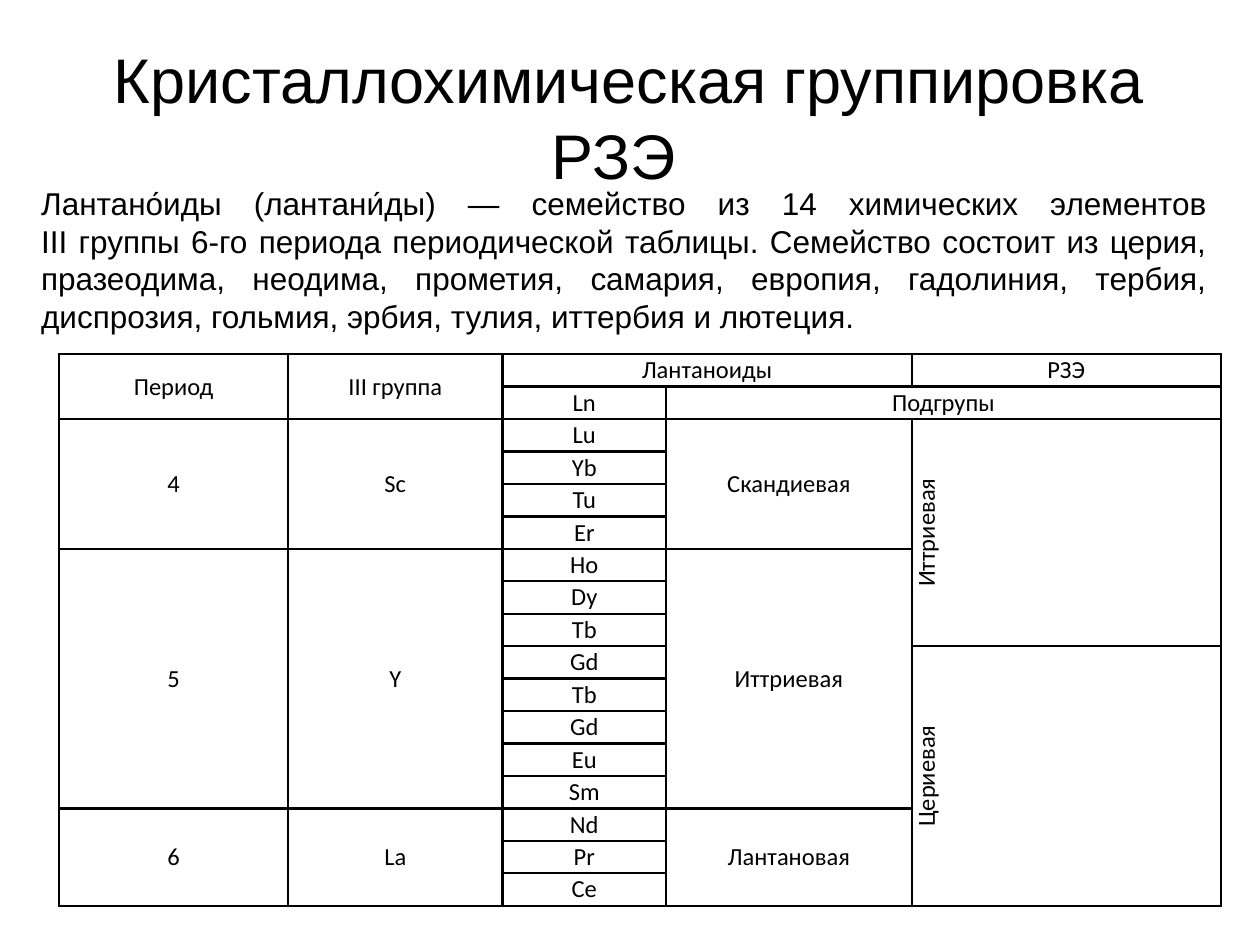
from lxml.etree import SubElement
from pptx import Presentation
from pptx.dml.color import RGBColor
from pptx.enum.text import MSO_ANCHOR, MSO_AUTO_SIZE, PP_ALIGN
from pptx.oxml.ns import qn
from pptx.util import Cm, Pt

BLACK = RGBColor(0, 0, 0)
TITLE_LINES = ["Кристаллохимическая группировка", " РЗЭ\t"]
DEFINITION_LINES = [
    "Лантано́иды (лантани́ды) — семейство из 14 химических элементов",
    "III группы 6-го периода периодической таблицы. Семейство состоит из "
    "церия, празеодима, неодима, прометия, самария, европия, гадолиния, "
    "тербия, диспрозия, гольмия, эрбия, тулия, иттербия и лютеция. ",
]
COLUMN_WIDTHS = [4.62, 4.32, 3.3, 4.95, 6.23]
LANTHANIDES = "Lu Yb Tu Er Ho Dy Tb Gd Tb Gd Eu Sm Nd Pr Ce".split()
HEADINGS = [
    (0, 0, 2, 1, "Период"),
    (0, 1, 2, 1, "III группа"),
    (0, 2, 1, 2, "Лантаноиды"),
    (0, 4, 1, 1, "РЗЭ"),
    (1, 2, 1, 1, "Ln"),
    (1, 3, 1, 2, "Подгрупы"),
]
PERIODS = [
    (4, "4", "Sc", "Скандиевая"),
    (8, "5", "Y", "Иттриевая"),
    (3, "6", "La", "Лантановая"),
]
RARE_EARTH_GROUPS = [(7, "Иттриевая"), (8, "Цериевая")]
FIRST_ELEMENT_ROW = 2


def add_run(paragraph, text, font_name, size):
    run = paragraph.add_run()
    run.text = text
    run.font.name = font_name
    run.font.size = Pt(size)
    run.font.color.rgb = BLACK


def write_lines(paragraph, lines, size, alignment):
    paragraph.alignment = alignment
    for number, line in enumerate(lines):
        if number:
            paragraph.add_line_break()
        add_run(paragraph, line, "Arial", size)


def place_title(slide, left, top, width, height):
    title = slide.shapes.title
    title.left, title.top, title.width, title.height = left, top, width, height
    frame = title.text_frame
    frame.vertical_anchor = MSO_ANCHOR.MIDDLE
    write_lines(frame.paragraphs[0], TITLE_LINES, 36, PP_ALIGN.CENTER)


def place_definition(slide, left, top, width, height):
    frame = slide.shapes.add_textbox(left, top, width, height).text_frame
    frame.word_wrap = True
    frame.auto_size = MSO_AUTO_SIZE.SHAPE_TO_FIT_TEXT
    write_lines(frame.paragraphs[0], DEFINITION_LINES, 18, PP_ALIGN.JUSTIFY)


def format_cell(cell):
    cell.margin_left = cell.margin_right = cell.margin_top = cell.margin_bottom = 0
    cell.vertical_anchor = MSO_ANCHOR.MIDDLE
    properties = cell._tc.get_or_add_tcPr()
    for side in ("a:lnL", "a:lnR", "a:lnT", "a:lnB"):
        border = SubElement(properties, qn(side), w=str(Pt(1.5)))
        fill = SubElement(border, qn("a:solidFill"))
        SubElement(fill, qn("a:srgbClr"), val=str(BLACK))
    cell.fill.background()


def group_entries():
    entries = list(HEADINGS)
    for row, symbol in enumerate(LANTHANIDES, FIRST_ELEMENT_ROW):
        entries.append((row, 2, 1, 1, symbol))
    row = FIRST_ELEMENT_ROW
    for span, period, element, subgroup in PERIODS:
        for column, text in ((0, period), (1, element), (3, subgroup)):
            entries.append((row, column, span, 1, text))
        row += span
    row = FIRST_ELEMENT_ROW
    for span, group in RARE_EARTH_GROUPS:
        entries.append((row, 4, span, 1, group))
        row += span
    return entries


def place_grouping(slide, left, top, width, height):
    row_count = FIRST_ELEMENT_ROW + len(LANTHANIDES)
    grouping = slide.shapes.add_table(
        row_count, len(COLUMN_WIDTHS), left, top, width, height
    ).table
    grouping.first_row = grouping.horz_banding = False
    for column, share in zip(grouping.columns, COLUMN_WIDTHS):
        column.width = int(width * share / sum(COLUMN_WIDTHS))
    for row in grouping.rows:
        row.height = height // row_count
    for cell in grouping.iter_cells():
        format_cell(cell)
    for row, column, row_span, column_span, text in group_entries():
        cell = grouping.cell(row, column)
        if row_span * column_span > 1:
            cell.merge(grouping.cell(row + row_span - 1, column + column_span - 1))
        if column == 4 and row >= FIRST_ELEMENT_ROW:
            cell._tc.get_or_add_tcPr().set("vert", "vert270")
        paragraph = cell.text_frame.paragraphs[0]
        paragraph.alignment = PP_ALIGN.CENTER
        add_run(paragraph, text, "Calibri", 14)


def main():
    presentation = Presentation()
    presentation.slide_width, presentation.slide_height = Cm(25.4), Cm(19.05)
    slide = presentation.slides.add_slide(presentation.slide_layouts[5])
    place_title(slide, Cm(0.58), Cm(0.76), Cm(24.2), Cm(3.18))
    place_grouping(slide, Cm(1.19), Cm(7.14), Cm(23.42), Cm(11.13))
    place_definition(slide, Cm(0.58), Cm(3.58), Cm(24), Cm(3.33))
    presentation.save("out.pptx")


if __name__ == "__main__":
    main()
